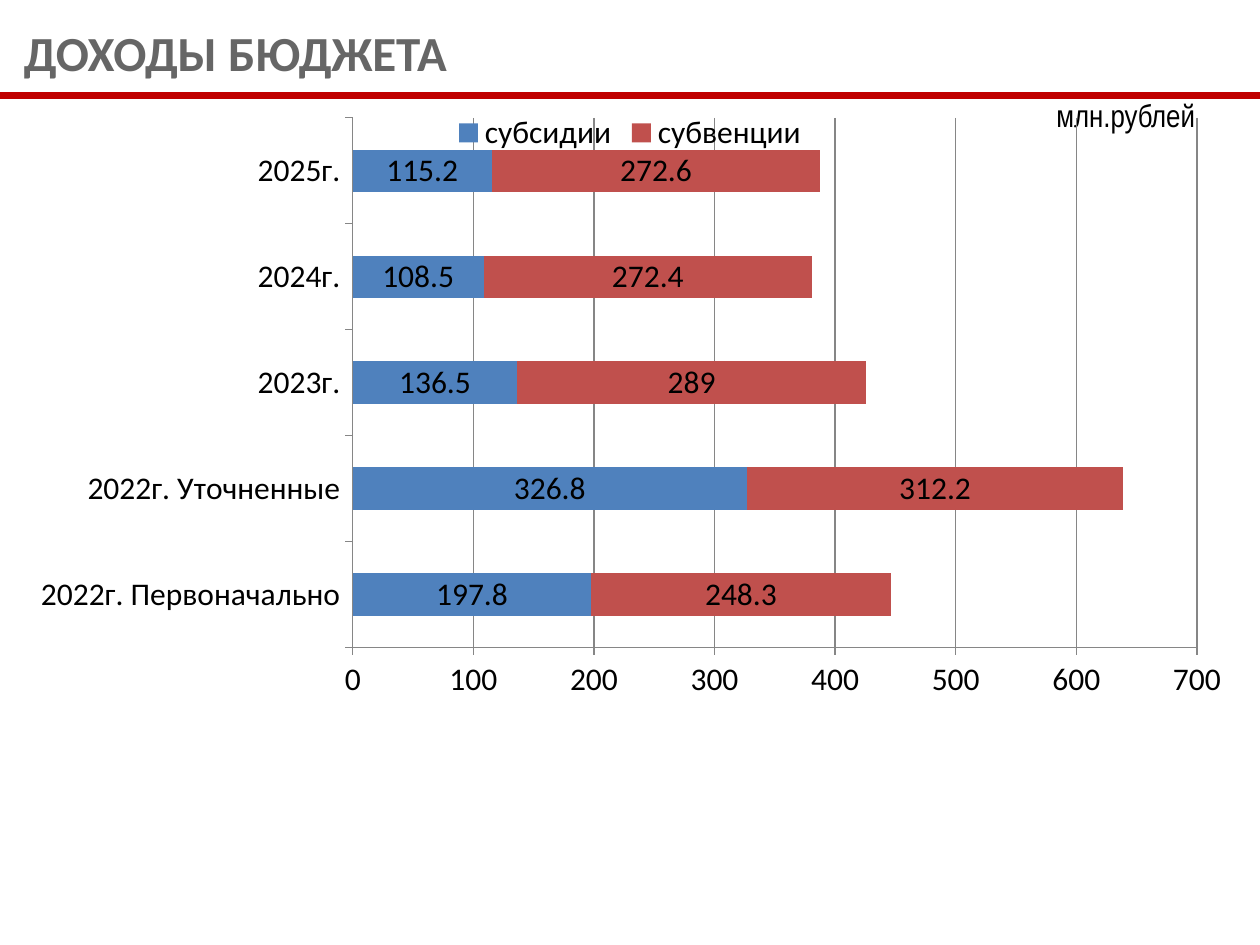
from typing import NamedTuple

from lxml import etree
from pptx import Presentation
from pptx.chart.data import CategoryChartData
from pptx.dml.color import RGBColor
from pptx.enum.chart import XL_CHART_TYPE, XL_LABEL_POSITION, XL_LEGEND_POSITION, XL_TICK_MARK
from pptx.enum.shapes import MSO_CONNECTOR
from pptx.enum.text import MSO_ANCHOR, PP_ALIGN
from pptx.oxml import parse_xml
from pptx.oxml.ns import nsdecls, qn
from pptx.util import Inches, Pt

BAR_STACKED = XL_CHART_TYPE.BAR_STACKED
LABEL_CENTER = XL_LABEL_POSITION.CENTER
LEGEND_TOP = XL_LEGEND_POSITION.TOP
TICK_OUT = XL_TICK_MARK.OUTSIDE
STRAIGHT = MSO_CONNECTOR.STRAIGHT
LEFT, CENTER = PP_ALIGN.LEFT, PP_ALIGN.CENTER
TOP, MIDDLE = MSO_ANCHOR.TOP, MSO_ANCHOR.MIDDLE

FONT = "Calibri"
BLACK, GRAY, RED, AXIS_GRAY = "000000", "666666", "C00000", "868686"


class Box(NamedTuple):
    left: float
    top: float
    width: float
    height: float


class Income(NamedTuple):
    name: str
    values: tuple[float, ...]
    color: str


YEARS = ("2022г. Первоначально", "2022г. Уточненные", "2023г.", "2024г.", "2025г.")
INCOMES = (
    Income("субсидии", (197.8, 326.8, 136.5, 108.5, 115.2), "4F81BD"),
    Income("субвенции", (248.3, 312.2, 289, 272.4, 272.6), "C0504D"),
)
PLOT_AREA = Box(0.28, 0.03, 0.67, 0.81)  # fractions of the chart


def rgb(color: str) -> RGBColor:
    return RGBColor.from_string(color)


def add_text(slide, box: Box, text: str, *, size=18, font=FONT, color=BLACK,
             bold=False, align=LEFT, anchor=TOP, inset=0.1):
    sp = slide.shapes.add_textbox(*map(Inches, box))
    tf = sp.text_frame
    tf.word_wrap = True
    tf.vertical_anchor = anchor
    tf.margin_left = Inches(inset)
    p = tf.paragraphs[0]
    p.alignment = align
    r = p.add_run()
    r.text = text
    r.font.size, r.font.name, r.font.bold = Pt(size), font, bold
    r.font.color.rgb = rgb(color)


def add_rule(slide, y: float, width: float, color: str, weight: float):
    line = slide.shapes.add_connector(STRAIGHT, 0, Inches(y), Inches(width), Inches(y))
    line.line.color.rgb = rgb(color)
    line.line.width = Pt(weight)
    etree.SubElement(line._element.spPr, qn("a:effectLst"))


def set_plot_area(chart, area: Box):
    """Fix the inner plot area, which python-pptx cannot place."""
    sizes = "".join(f'<c:{tag} val="{value}"/>' for tag, value in zip("xywh", area))
    layout = parse_xml(
        f'<c:layout {nsdecls("c")}><c:manualLayout><c:layoutTarget val="inner"/>'
        f'<c:xMode val="edge"/><c:yMode val="edge"/>{sizes}</c:manualLayout></c:layout>')
    plot_area = chart._chartSpace.chart.plotArea
    for old in plot_area.findall(qn("c:layout")):
        plot_area.remove(old)
    plot_area.insert(0, layout)


def add_income_chart(slide, box: Box):
    data = CategoryChartData()
    data.categories = YEARS
    for income in INCOMES:
        data.add_series(income.name, income.values)
    chart = slide.shapes.add_chart(BAR_STACKED, *map(Inches, box), data).chart
    chart.font.size, chart.font.name = Pt(18), FONT
    chart.font.color.rgb = rgb(BLACK)
    chart.has_title = False
    chart.has_legend = True
    chart.legend.position = LEGEND_TOP
    chart.legend.include_in_layout = False
    set_plot_area(chart, PLOT_AREA)

    value_axis = chart.value_axis
    value_axis.has_major_gridlines = True
    for axis in (chart.category_axis, value_axis):
        axis.major_tick_mark = TICK_OUT
        axis.format.line.color.rgb = rgb(AXIS_GRAY)
    value_axis.major_gridlines.format.line.color.rgb = rgb(AXIS_GRAY)

    plot = chart.plots[0]
    plot.gap_width, plot.overlap = 150, 100
    plot.vary_by_categories = False
    for series, income in zip(plot.series, INCOMES):
        series.format.fill.solid()
        series.format.fill.fore_color.rgb = rgb(income.color)
        labels = series.data_labels
        labels.show_value = True
        labels.position = LABEL_CENTER


def main():
    prs = Presentation()
    prs.slide_width, prs.slide_height = Inches(10), Inches(7.5)
    slide = prs.slides.add_slide(prs.slide_layouts[6])
    add_text(slide, Box(8.07, 0.76, 1.73, 0.31), "млн.рублей",
             font="Arial Narrow", align=CENTER, anchor=MIDDLE)
    add_text(slide, Box(0, 0.13, 10, 0.57), "ДОХОДЫ БЮДЖЕТА",
             size=28, color=GRAY, bold=True, inset=0.19)
    add_rule(slide, 0.76, 10, RED, 4)
    add_income_chart(slide, Box(0, 0.78, 10, 5.19))
    prs.save("out.pptx")


if __name__ == "__main__":
    main()
